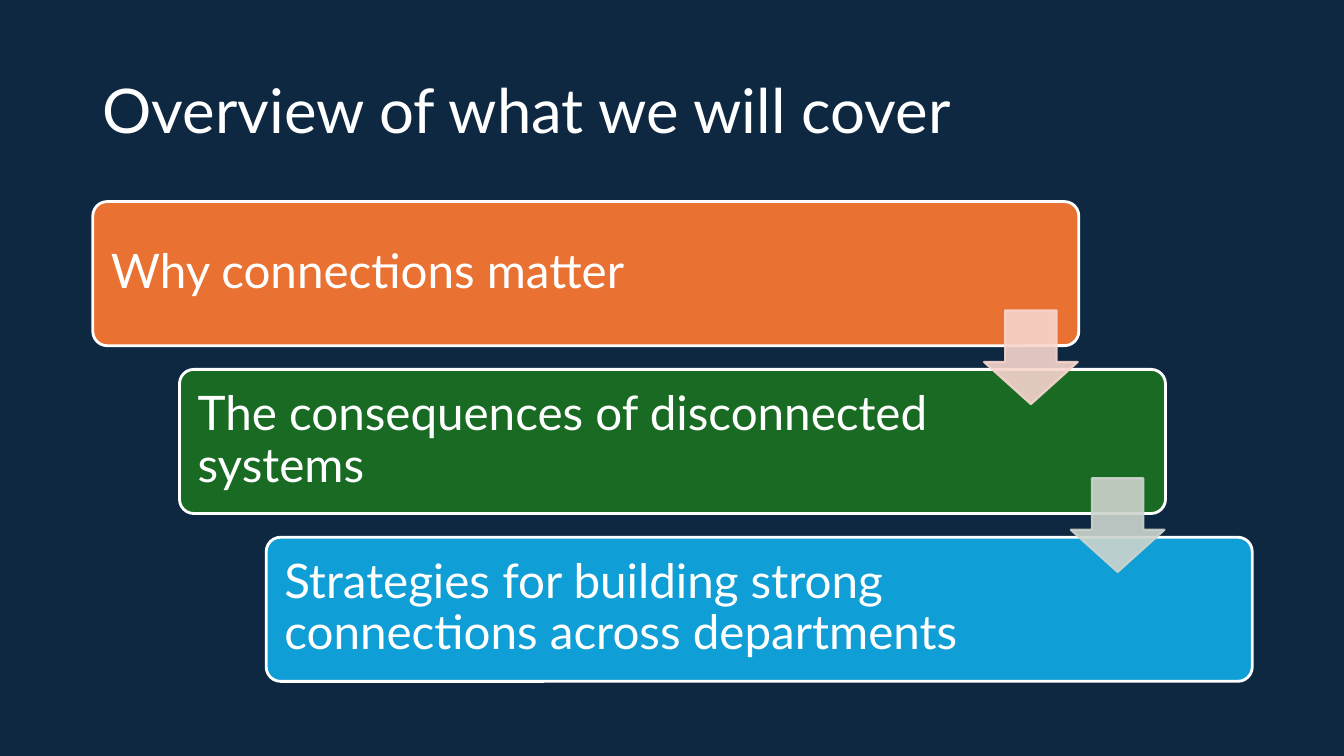
from pptx import Presentation
from pptx.dml.color import RGBColor
from pptx.enum.shapes import MSO_SHAPE
from pptx.enum.text import MSO_ANCHOR
from pptx.oxml.ns import qn
from pptx.util import Inches, Pt
from lxml import etree

BAR = MSO_SHAPE.ROUNDED_RECTANGLE
ARROW = MSO_SHAPE.DOWN_ARROW
MIDDLE = MSO_ANCHOR.MIDDLE

COLORS = {
    "navy": "0E2841", "white": "FFFFFF", "orange": "E97132",
    "green": "196B24", "blue": "0F9ED5", "pink": "F7D5CE", "gray": "CCD4CD",
}
STEPS = [
    ("Why connections matter", "orange", 8.23),
    ("The consequences of disconnected systems", "green", 7.9),
    ("Strategies for building strong connections across departments", "blue", 7.9),
]
LEFT, TOP = 0.92, 2
STEP_X, STEP_Y = 0.86, 1.665


def color(name):
    return RGBColor.from_string(COLORS[name])


def add_text(slide, box, text, size, inset=None):
    frame = slide.shapes.add_textbox(*map(Inches, box)).text_frame
    layout = {"word_wrap": True, "vertical_anchor": MIDDLE}
    if inset is not None:
        for side in ("left", "right", "top", "bottom"):
            layout["margin_" + side] = Inches(inset)
    for key, value in layout.items():
        setattr(frame, key, value)
    para = frame.paragraphs[0]
    para.line_spacing = 0.9
    run = para.add_run()
    run.text = text
    for key, value in {"name": "Lato", "size": Pt(size)}.items():
        setattr(run.font, key, value)
    run.font.color.rgb = color("white")


def add_shape(slide, kind, box, adjust, fill, line, width):
    shape = slide.shapes.add_shape(kind, *map(Inches, box))
    shape.shadow.inherit = False
    for i, value in enumerate(adjust):
        shape.adjustments[i] = value
    shape.fill.solid()
    shape.fill.fore_color.rgb = color(fill)
    shape.line.color.rgb = color(line)
    shape.line.width = Pt(width)
    return shape


def set_alpha(shape, percent):
    """Set the opacity of both fill and line."""
    for node in shape._element.spPr.iter(qn("a:srgbClr")):
        etree.SubElement(node, qn("a:alpha")).set("val", str(percent * 1000))


def add_step(slide, i, text, fill, width):
    x, y = LEFT + i * STEP_X, TOP + i * STEP_Y
    add_shape(slide, BAR, (x, y, 9.78, 1.43), [0.1], fill, "white", 2)
    add_text(slide, (x + 0.04, y + 0.04, width, 1.34), text, 34, 0.14)


def add_arrow(slide, i, tint):
    box = (9.76 + i * STEP_X, 3.08 + i * STEP_Y, 0.93, 0.93)
    arrow = add_shape(slide, ARROW, box, [0.55, 0.45], tint, tint, 1.5)
    set_alpha(arrow, 90)


def main():
    deck = Presentation()
    deck.slide_width, deck.slide_height = Inches(13.33), Inches(7.5)
    slide = deck.slides.add_slide(deck.slide_layouts[6])
    slide.background.fill.solid()
    slide.background.fill.fore_color.rgb = color("navy")

    add_text(slide, (LEFT, 0.4, 11.5, 1.45), "Overview of what we will cover", 44)
    for i, step in enumerate(STEPS):
        add_step(slide, i, *step)
    for i, tint in enumerate(("pink", "gray")):
        add_arrow(slide, i, tint)
    deck.save("out.pptx")


if __name__ == "__main__":
    main()
